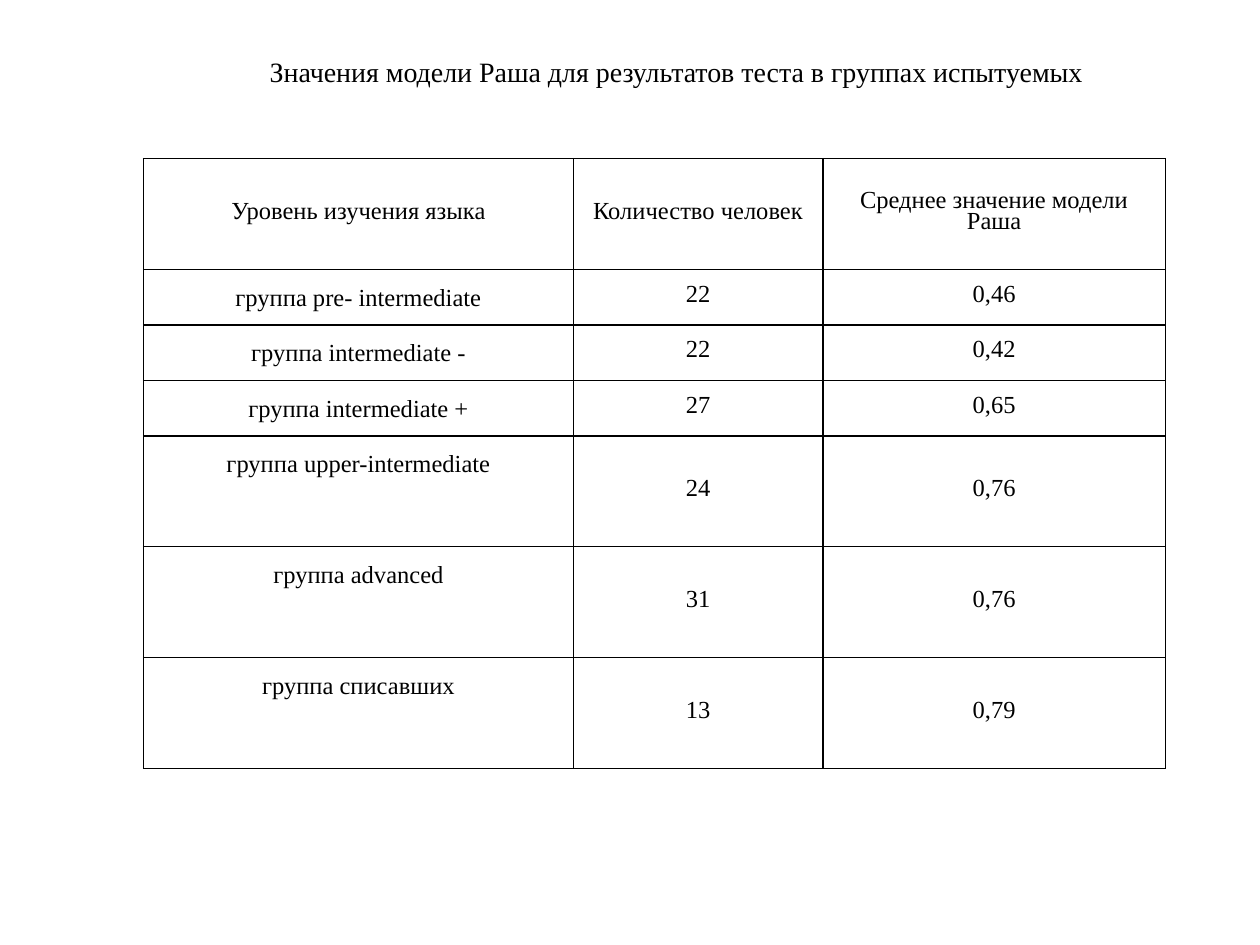
from lxml import etree
from pptx import Presentation
from pptx.dml.color import RGBColor
from pptx.enum.text import MSO_ANCHOR, PP_ALIGN
from pptx.oxml.ns import qn
from pptx.util import Inches, Pt

BLACK = RGBColor(0, 0, 0)
FONT_NAME = "Times New Roman"
TOP, MIDDLE = MSO_ANCHOR.TOP, MSO_ANCHOR.MIDDLE
CENTER = PP_ALIGN.CENTER

TITLE = "Значения модели Раша для результатов теста в группах испытуемых"
COLUMN_WIDTHS = [3.41, 1.98, 2.72]
ROW_HEIGHTS = [0.88] + [0.44] * 3 + [0.88] * 3
ROWS = [
    ("Уровень изучения языка", "Количество человек", "Среднее значение модели Раша"),
    ("группа pre- intermediate", "22", "0,46"),
    ("группа intermediate -", "22", "0,42"),
    ("группа intermediate +", "27", "0,65"),
    ("группа upper-intermediate", "24", "0,76"),
    ("группа advanced", "31", "0,76"),
    ("группа списавших", "13", "0,79"),
]


def write_text(text_frame, text, size):
    paragraph = text_frame.paragraphs[0]
    run = paragraph.add_run()
    run.text = text
    for name, value in {"name": FONT_NAME, "size": Pt(size)}.items():
        setattr(run.font, name, value)
    run.font.color.rgb = BLACK
    return paragraph


def add_borders(cell):
    """Draw a 1 pt line on all four sides; call before the cell gets its fill."""
    properties = cell._tc.get_or_add_tcPr()
    for side in ("lnL", "lnR", "lnT", "lnB"):
        line = etree.SubElement(properties, qn(f"a:{side}"), w=str(Pt(1)))
        fill = etree.SubElement(line, qn("a:solidFill"))
        etree.SubElement(fill, qn("a:srgbClr"), val=str(BLACK))


presentation = Presentation()
presentation.slide_width = Inches(10)
presentation.slide_height = Inches(7.5)
slide = presentation.slides.add_slide(presentation.slide_layouts[6])

# Table
table_shape = slide.shapes.add_table(
    len(ROWS), len(COLUMN_WIDTHS),
    Inches(1.14), Inches(1.26), Inches(sum(COLUMN_WIDTHS)), Inches(sum(ROW_HEIGHTS)),
)
table = table_shape.table
table.first_row = False
table.horz_banding = False
for column, width in zip(table.columns, COLUMN_WIDTHS):
    column.width = Inches(width)

for row_index, (texts, height) in enumerate(zip(ROWS, ROW_HEIGHTS)):
    table.rows[row_index].height = Inches(height)
    for column_index, text in enumerate(texts):
        cell = table.cell(row_index, column_index)
        is_group_name = row_index > 0 and column_index == 0
        cell_format = {
            "vertical_anchor": TOP if is_group_name else MIDDLE,
            "margin_left": Inches(0.07),
            "margin_right": Inches(0.07),
            "margin_top": Pt(12) if is_group_name else 0,
            "margin_bottom": 0,
        }
        for name, value in cell_format.items():
            setattr(cell, name, value)
        add_borders(cell)
        cell.fill.background()
        paragraph = write_text(cell.text_frame, text, 14)
        paragraph.alignment = CENTER
        paragraph.line_spacing = Pt(12)

# Title
title = slide.shapes.add_textbox(Inches(1.54), Inches(0.36), Inches(7.31), Inches(0.67))
title_format = {
    "word_wrap": True,
    "vertical_anchor": TOP,
    "margin_left": Inches(0.6),
    "margin_top": Inches(0.07),
}
for name, value in title_format.items():
    setattr(title.text_frame, name, value)
write_text(title.text_frame, TITLE, 16)

presentation.save("out.pptx")
